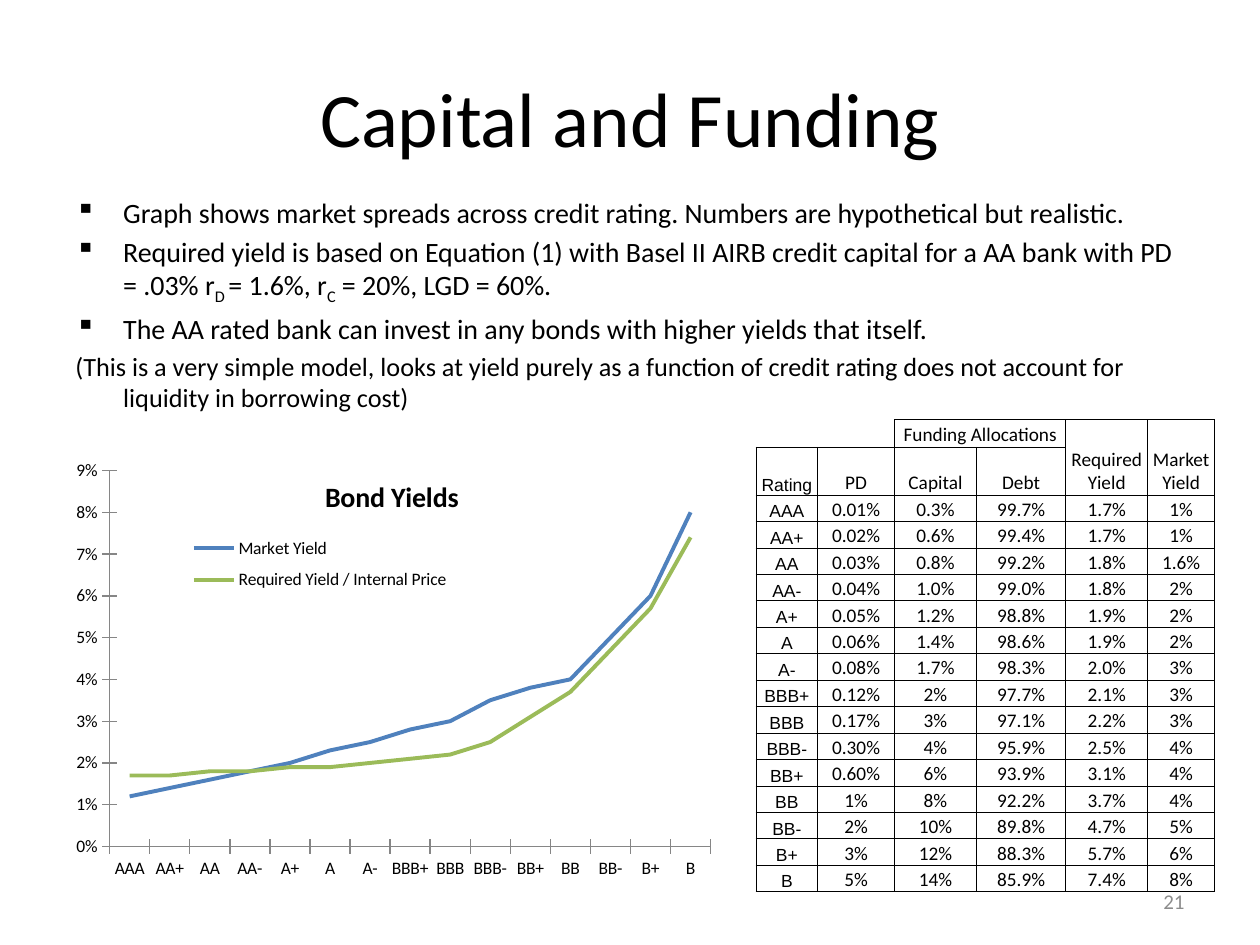
from lxml import etree
from pptx import Presentation
from pptx.chart.data import CategoryChartData
from pptx.dml.color import RGBColor
from pptx.enum.chart import XL_CHART_TYPE as ChartType, XL_LEGEND_POSITION as LegendPosition, XL_TICK_MARK as TickMark
from pptx.enum.text import MSO_ANCHOR as Anchor, PP_ALIGN as Align
from pptx.oxml.ns import qn
from pptx.util import Inches, Pt

BLACK = RGBColor(0x00, 0x00, 0x00)
GREY = RGBColor(0x8C, 0x8C, 0x8C)
AXIS_GREY = RGBColor(0x86, 0x86, 0x86)
BLUE = RGBColor(0x4F, 0x81, 0xBD)
GREEN = RGBColor(0x9B, 0xBB, 0x59)

BULLETS = [
    [("Graph shows market spreads across credit rating. Numbers are hypothetical but realistic.", False)],
    [("Required yield is based on Equation (1) with Basel II AIRB credit capital for a AA bank with PD = .03% r", False),
     ("D ", True), ("= 1.6%, r", False), ("C", True), (" = 20%, LGD = 60%.", False)],
    [("The AA rated bank can invest in any bonds with higher yields that itself.", False)],
]
REMARK = ("(This is a very simple model, looks at yield purely as a function of credit rating "
          "does not account for liquidity in borrowing cost)")
HEADERS = [
    ["", "", "Funding Allocations", "", "Required Yield", "Market Yield"],
    ["Rating", "PD", "Capital", "Debt", "", ""],
]
RATINGS = [line.split() for line in """
AAA 0.01% 0.3% 99.7% 1.7% 1%
AA+ 0.02% 0.6% 99.4% 1.7% 1%
AA 0.03% 0.8% 99.2% 1.8% 1.6%
AA- 0.04% 1.0% 99.0% 1.8% 2%
A+ 0.05% 1.2% 98.8% 1.9% 2%
A 0.06% 1.4% 98.6% 1.9% 2%
A- 0.08% 1.7% 98.3% 2.0% 3%
BBB+ 0.12% 2% 97.7% 2.1% 3%
BBB 0.17% 3% 97.1% 2.2% 3%
BBB- 0.30% 4% 95.9% 2.5% 4%
BB+ 0.60% 6% 93.9% 3.1% 4%
BB 1% 8% 92.2% 3.7% 4%
BB- 2% 10% 89.8% 4.7% 5%
B+ 3% 12% 88.3% 5.7% 6%
B 5% 14% 85.9% 7.4% 8%
""".strip().splitlines()]
MARKET_YIELDS = [0.012, 0.014, 0.016, 0.018, 0.02, 0.023, 0.025, 0.028,
                 0.03, 0.035, 0.038, 0.04, 0.05, 0.06, 0.08]


def add_span(para, text, size=11, font="Calibri", color=BLACK, bold=False, subscript=False):
    span = para.add_run()
    span.text = text
    span.font.size = Pt(size)
    span.font.name = font
    span.font.bold = bold
    span.font.color.rgb = color
    if subscript:
        span._r.get_or_add_rPr().set("baseline", "-25000")


def add_frame(page, box, anchor=Anchor.TOP):
    frame = page.shapes.add_textbox(*map(Inches, box)).text_frame
    frame.word_wrap = True
    frame.vertical_anchor = anchor
    return frame


def add_line_of_text(page, box, text, align, **style):
    para = add_frame(page, box, Anchor.MIDDLE).paragraphs[0]
    para.alignment = align
    add_span(para, text, **style)


def add_body(page, box):
    frame = add_frame(page, box)
    for index, pieces in enumerate(BULLETS + [[(REMARK, False)]]):
        para = frame.paragraphs[0] if index == 0 else frame.add_paragraph()
        para.space_before = Pt(3)
        props = para._p.get_or_add_pPr()
        props.set("marL", str(Inches(0.38)))
        props.set("indent", str(Inches(-0.38)))
        is_bullet = index < len(BULLETS)
        if is_bullet:
            etree.SubElement(props, qn("a:buChar"), char="▪")
        else:
            etree.SubElement(props, qn("a:buNone"))
        for text, subscript in pieces:
            add_span(para, text, size=16 if is_bullet else 15, subscript=subscript)


def set_layout(parent, after=None, inner=False, **bounds):
    for old in parent.findall(qn("c:layout")):
        parent.remove(old)
    layout = etree.Element(qn("c:layout"))
    manual = etree.SubElement(layout, qn("c:manualLayout"))
    if inner:
        etree.SubElement(manual, qn("c:layoutTarget"), val="inner")
    for side in ("x", "y"):
        etree.SubElement(manual, qn(f"c:{side}Mode"), val="edge")
    for side, value in bounds.items():
        etree.SubElement(manual, qn(f"c:{side}"), val=str(value))
    if after:
        parent.find(qn(after)).addnext(layout)
    else:
        parent.insert(0, layout)


def add_yield_chart(page, box):
    data = CategoryChartData(number_format="0%")
    data.categories = [row[0] for row in RATINGS]
    data.add_series("Market Yield", MARKET_YIELDS)
    data.add_series("Required Yield / Internal Price",
                    [round(float(row[4].rstrip("%")) / 100, 3) for row in RATINGS])
    chart = page.shapes.add_chart(ChartType.LINE, *map(Inches, box), data).chart
    chart.font.size = Pt(10)
    chart.font.name = "Calibri"
    chart.font.color.rgb = BLACK

    chart.has_title = True
    add_span(chart.chart_title.text_frame.paragraphs[0], "Bond Yields", size=16, bold=True)
    title = chart.element.find(".//" + qn("c:title"))
    set_layout(title, after="c:tx", x=0.4, y=0.05)
    title.find(qn("c:overlay")).set("val", "1")

    chart.has_legend = True
    chart.legend.position = LegendPosition.RIGHT
    chart.legend.include_in_layout = False
    set_layout(chart.element.find(".//" + qn("c:legend")), after="c:legendPos",
               x=0.19, y=0.17, w=0.42, h=0.17)
    set_layout(chart.element.find(".//" + qn("c:plotArea")), inner=True,
               x=0.085, y=0.044, w=0.9, h=0.848)

    for axis in (chart.category_axis, chart.value_axis):
        axis.has_major_gridlines = False
        axis.major_tick_mark = TickMark.CROSS
        axis.format.line.color.rgb = AXIS_GREY
    scale = chart.value_axis
    scale.minimum_scale, scale.maximum_scale, scale.major_unit = 0, 0.09, 0.01
    scale.tick_labels.number_format = "0%"
    scale.tick_labels.number_format_is_linked = False

    chart.plots[0].vary_by_categories = False
    for series, color in zip(chart.plots[0].series, (BLUE, GREEN)):
        series.smooth = False
        series.format.line.width = Pt(2.25)
        series.format.line.color.rgb = color


def set_borders(cell, sides):
    props = cell._tc.get_or_add_tcPr()
    for index, side in enumerate(side for side in "LRTB" if side in sides):
        line = etree.Element(qn(f"a:ln{side}"), w=str(Pt(0.5)))
        fill = etree.SubElement(line, qn("a:solidFill"))
        etree.SubElement(fill, qn("a:srgbClr"), val=str(BLACK))
        props.insert(index, line)


def fill_cell(cell, text, font, size, borders):
    cell.margin_left = cell.margin_right = cell.margin_top = cell.margin_bottom = 0
    cell.vertical_anchor = Anchor.BOTTOM
    cell.fill.background()
    set_borders(cell, borders)
    para = cell.text_frame.paragraphs[0]
    para.alignment = Align.CENTER
    if text:
        add_span(para, text, size=size, font=font)
    else:
        etree.SubElement(para._p, qn("a:endParaRPr"), sz=str(size * 100))


def add_rating_table(page, box):
    rows = HEADERS + RATINGS
    widths = [0.49, 0.61, 0.65, 0.71, 0.65, 0.53]
    heights = [0.22, 0.38] + [0.21] * len(RATINGS)
    table = page.shapes.add_table(len(rows), len(widths), *map(Inches, box)).table
    table.first_row = table.horz_banding = False
    for column, width in zip(table.columns, widths):
        column.width = Inches(width)
    for row, height in zip(table.rows, heights):
        row.height = Inches(height)
    corner_borders = {(0, 0): "B", (0, 1): "RB"}
    for r, row in enumerate(rows):
        for c, text in enumerate(row):
            font, size = ("Arial", 10) if c == 0 else ("Calibri", 11)
            fill_cell(table.cell(r, c), text, font, size, corner_borders.get((r, c), "LRTB"))
    for start, end in (((0, 2), (0, 3)), ((0, 4), (1, 4)), ((0, 5), (1, 5))):
        table.cell(*start).merge(table.cell(*end))


def main():
    deck = Presentation()
    deck.slide_width, deck.slide_height = Inches(10), Inches(7.5)
    page = deck.slides.add_slide(deck.slide_layouts[6])
    add_body(page, (0.5, 1.5, 9, 4.95))
    add_line_of_text(page, (0.5, 0.3, 9, 1.25), "Capital and Funding", Align.CENTER, size=44)
    add_line_of_text(page, (7.17, 6.95, 2.33, 0.4), "21", Align.RIGHT, size=12, color=GREY)
    add_yield_chart(page, (0.42, 3.58, 5.3, 3.52))
    add_rating_table(page, (6, 3.33, 3.64, 3.75))
    deck.save("out.pptx")


if __name__ == "__main__":
    main()
